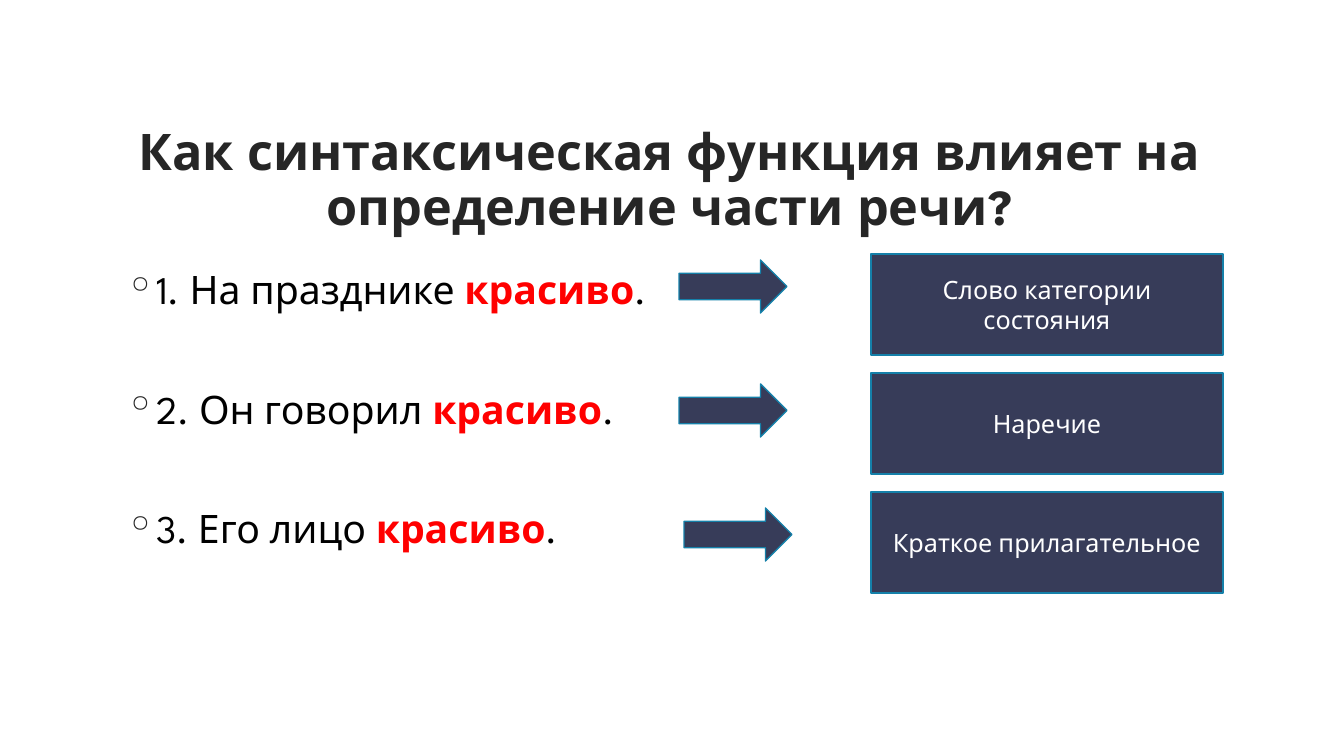
from lxml.etree import SubElement
from pptx import Presentation
from pptx.dml.color import RGBColor
from pptx.enum.shapes import MSO_SHAPE
from pptx.enum.text import MSO_ANCHOR, PP_ALIGN
from pptx.oxml.ns import qn
from pptx.util import Pt

TITLE = "Как синтаксическая функция влияет на определение части речи?"
KEYWORD = "красиво"
EXAMPLES = [
    ("1. На празднике ", "Слово категории состояния"),
    ("2. Он говорил ", "Наречие"),
    ("3. Его лицо ", "Краткое прилагательное"),
]
COLORS = {
    "title": "262626", "text": "000000", "keyword": "FF0000",
    "fill": "373C59", "line": "1580A9", "label": "FFFFFF",
}
FONT = "League Spartan"
EMU_PER_PX = 914400 / 100.8
SLIDE = (1344, 756)
TITLE_BOX = (115, 106, 1109, 151)
LIST_BOX = (115, 260, 1109, 430)
ARROW_LEFTS = (679, 679, 684)
ARROW_TOP, ARROW_PITCH = 260, 124
ARROW_SIZE = (108, 53)
LABEL_LEFT, LABEL_TOP, LABEL_PITCH = 871, 254, 119
LABEL_SIZE = (352, 101)
LINE_HEIGHT, ITEM_GAP = 34, 51.4
BULLET_INDENT = 20


def px(value):
    return round(value * EMU_PER_PX)


def color(name):
    return RGBColor.from_string(COLORS[name])


def add_span(para, text, size, color_name, bold=False):
    span = para.add_run()
    span.text = text
    span.font.name = FONT
    span.font.size = Pt(size)
    span.font.bold = bold
    span.font.color.rgb = color(color_name)


def add_box(page, place, anchor):
    box = page.shapes.add_textbox(*map(px, place))
    box.text_frame.word_wrap = True
    box.text_frame.vertical_anchor = anchor
    return box.text_frame


def add_bullet(para):
    properties = para._p.get_or_add_pPr()
    properties.set("marL", str(px(BULLET_INDENT)))
    properties.set("indent", str(-px(BULLET_INDENT)))
    tint = SubElement(properties, qn("a:buClr"))
    SubElement(tint, qn("a:srgbClr"), val=COLORS["title"])
    SubElement(properties, qn("a:buChar"), char="◦")


def add_block(page, kind, place):
    block = page.shapes.add_shape(kind, *map(px, place))
    block.shadow.inherit = False
    block.fill.solid()
    block.fill.fore_color.rgb = color("fill")
    block.line.color.rgb = color("line")
    block.line.width = Pt(1)
    return block


def main():
    deck = Presentation()
    deck.slide_width, deck.slide_height = map(px, SLIDE)
    page = deck.slides.add_slide(deck.slide_layouts[6])

    para = add_box(page, TITLE_BOX, MSO_ANCHOR.MIDDLE).paragraphs[0]
    para.alignment = PP_ALIGN.CENTER
    para.line_spacing = 0.9
    add_span(para, TITLE, 36, "title", True)

    sentences = add_box(page, LIST_BOX, MSO_ANCHOR.TOP)
    for row, (sentence, label) in enumerate(EXAMPLES):
        para = sentences.add_paragraph() if row else sentences.paragraphs[0]
        add_bullet(para)
        para.line_spacing = Pt(LINE_HEIGHT)
        if row:
            para.space_before = Pt(ITEM_GAP)
        add_span(para, sentence, 28, "text")
        add_span(para, KEYWORD, 28, "keyword", True)
        add_span(para, ".", 28, "text")

        arrow_top = ARROW_TOP + row * ARROW_PITCH
        add_block(page, MSO_SHAPE.RIGHT_ARROW, (ARROW_LEFTS[row], arrow_top, *ARROW_SIZE))

        label_top = LABEL_TOP + row * LABEL_PITCH
        block = add_block(page, MSO_SHAPE.RECTANGLE, (LABEL_LEFT, label_top, *LABEL_SIZE))
        block.text_frame.word_wrap = True
        block.text_frame.vertical_anchor = MSO_ANCHOR.MIDDLE
        para = block.text_frame.paragraphs[0]
        para.alignment = PP_ALIGN.CENTER
        add_span(para, label, 18, "label")

    deck.save("out.pptx")


if __name__ == "__main__":
    main()
